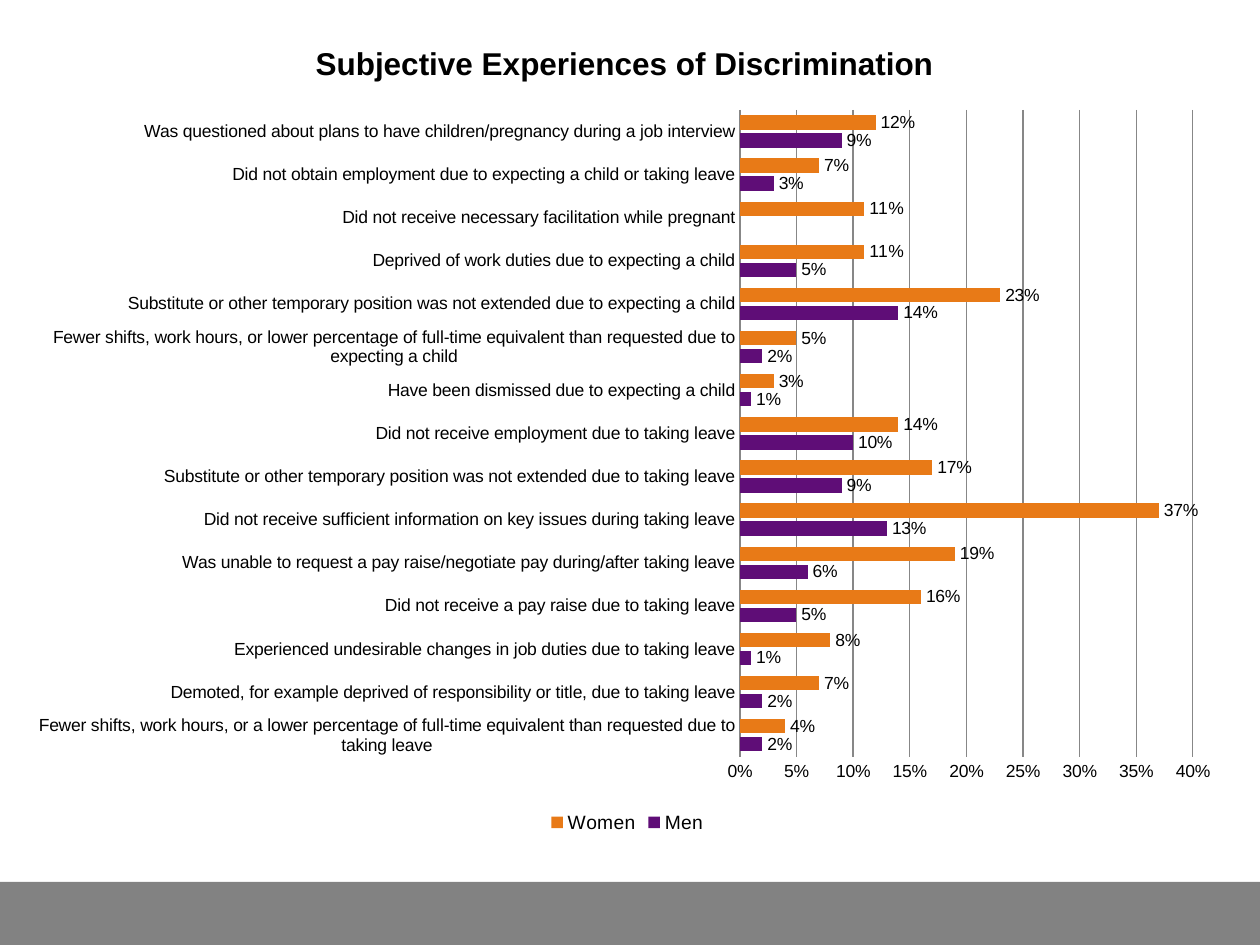
from dataclasses import dataclass

from lxml import etree
from pptx import Presentation
from pptx import util as u
from pptx.chart.data import CategoryChartData
from pptx.dml.color import RGBColor
from pptx.enum import chart as ch, shapes
from pptx.oxml.ns import qn

TITLE = "Subjective Experiences of Discrimination"
# Experience, women %, men %, from top to bottom
ROWS = [
    ("Was questioned about plans to have children/pregnancy during a job interview", 12, 9),
    ("Did not obtain employment due to expecting a child or taking leave", 7, 3),
    ("Did not receive necessary facilitation while pregnant", 11, None),
    ("Deprived of work duties due to expecting a child", 11, 5),
    ("Substitute or other temporary position was not extended due to expecting a child", 23, 14),
    ("Fewer shifts, work hours, or lower percentage of full-time equivalent than requested "
     "due to expecting a child", 5, 2),
    ("Have been dismissed due to expecting a child", 3, 1),
    ("Did not receive employment due to taking leave", 14, 10),
    ("Substitute or other temporary position was not extended due to taking leave", 17, 9),
    ("Did not receive sufficient information on key issues during taking leave", 37, 13),
    ("Was unable to request a pay raise/negotiate pay during/after taking leave", 19, 6),
    ("Did not receive a pay raise due to taking leave", 16, 5),
    ("Experienced undesirable changes in job duties due to taking leave", 8, 1),
    ("Demoted, for example deprived of responsibility or title, due to taking leave", 7, 2),
    ("Fewer shifts, work hours, or a lower percentage of full-time equivalent than requested "
     "due to taking leave", 4, 2),
]


@dataclass(frozen=True)
class Theme:
    font: str = "Arial"
    text: RGBColor = RGBColor(0x00, 0x00, 0x00)
    women: RGBColor = RGBColor(0xE8, 0x7A, 0x17)
    men: RGBColor = RGBColor(0x5F, 0x0D, 0x77)
    grid: RGBColor = RGBColor(0x87, 0x87, 0x87)
    footer: RGBColor = RGBColor(0x82, 0x82, 0x82)
    title_size: int = 18
    legend_size: int = 11
    label_size: int = 10


THEME = Theme()
PX = 914400 // 126
SLIDE_W, SLIDE_H = 1260, 945
FOOTER = (0, 882, 1260, 63)
CHART = (15, 16, 1220, 824)
PLOT = (740, 110, 453, 647)
TITLE_POS = (310, 37)
LEGEND_POS = (545, 810)


def emu(box):
    return [v * PX for v in box]


def place(parent, box, after=None, inner=False):
    """Fix a chart part at a slide position in px, right behind the child named after."""
    for old in parent.findall(qn("c:layout")):
        parent.remove(old)
    layout = etree.Element(qn("c:layout"))
    manual = etree.SubElement(layout, qn("c:manualLayout"))
    left, top, width, height = CHART
    shares = [(box[0] - left) / width, (box[1] - top) / height]
    if len(box) == 4:
        shares += [box[2] / width, box[3] / height]
    settings = [("layoutTarget", "inner")] if inner else []
    settings += [("xMode", "edge"), ("yMode", "edge")]
    settings += [(name, f"{share:.4f}") for name, share in zip("xywh", shares)]
    for name, value in settings:
        etree.SubElement(manual, qn(f"c:{name}")).set("val", value)
    index = parent.index(parent.find(qn(after))) + 1 if after else 0
    parent.insert(index, layout)


def set_font(font, size, bold=False):
    font.name, font.size, font.bold = THEME.font, u.Pt(size), bold
    font.color.rgb = THEME.text


def add_footer(s):
    sp = s.shapes.add_shape(shapes.MSO_SHAPE.RECTANGLE, *emu(FOOTER))
    sp.shadow.inherit = False
    sp.fill.solid()
    sp.fill.fore_color.rgb = THEME.footer
    sp.line.fill.background()


def add_bars(s):
    # Bar charts stack categories and series upwards
    labels, women, men = zip(*reversed(ROWS))
    data = CategoryChartData(number_format="0%")
    data.categories = labels
    for name, values in (("Men", men), ("Women", women)):
        data.add_series(name, [None if v is None else v / 100 for v in values])
    chart = s.shapes.add_chart(ch.XL_CHART_TYPE.BAR_CLUSTERED, *emu(CHART), data).chart
    set_font(chart.font, THEME.label_size)

    plot = chart.plots[0]
    plot.gap_width, plot.overlap, plot.vary_by_categories = 75, -25, False
    for series, color in zip(plot.series, (THEME.men, THEME.women)):
        series.format.fill.solid()
        series.format.fill.fore_color.rgb = color
        series.invert_if_negative = False
        series.data_labels.show_value = True
        series.data_labels.number_format = "0%"
        series.data_labels.number_format_is_linked = False
        series.data_labels.position = ch.XL_LABEL_POSITION.OUTSIDE_END
    return chart


def style_axes(chart):
    cat, val = chart.category_axis, chart.value_axis
    for axis in (cat, val):
        axis.major_tick_mark = axis.minor_tick_mark = ch.XL_TICK_MARK.NONE
        set_font(axis.tick_labels.font, THEME.label_size)
    val.minimum_scale, val.maximum_scale, val.major_unit = 0, 0.4, 0.05
    val.has_major_gridlines = True
    val.tick_labels.number_format = "0%"
    val.tick_labels.number_format_is_linked = False
    val.format.line.fill.background()
    for line in (cat.format.line, val.major_gridlines.format.line):
        line.color.rgb = THEME.grid
        line.width = u.Pt(0.75)


def add_title_and_legend(chart):
    chart.has_title = True
    title = chart.chart_title
    r = title.text_frame.paragraphs[0].add_run()
    r.text = TITLE
    set_font(r.font, THEME.title_size, bold=True)
    title.include_in_layout = False

    chart.has_legend = True
    legend = chart.legend
    legend.position = ch.XL_LEGEND_POSITION.BOTTOM
    legend.include_in_layout = False
    set_font(legend.font, THEME.legend_size)


def main():
    prs = Presentation()
    prs.slide_width, prs.slide_height = emu((SLIDE_W, SLIDE_H))
    s = prs.slides.add_slide(prs.slide_layouts[6])
    add_footer(s)
    chart = add_bars(s)
    style_axes(chart)
    add_title_and_legend(chart)

    root = chart.element.find(qn("c:chart"))
    place(root.find(qn("c:plotArea")), PLOT, inner=True)
    place(root.find(qn("c:title")), TITLE_POS, after="c:tx")
    place(root.find(qn("c:legend")), LEGEND_POS, after="c:legendPos")
    prs.save("out.pptx")


if __name__ == "__main__":
    main()
